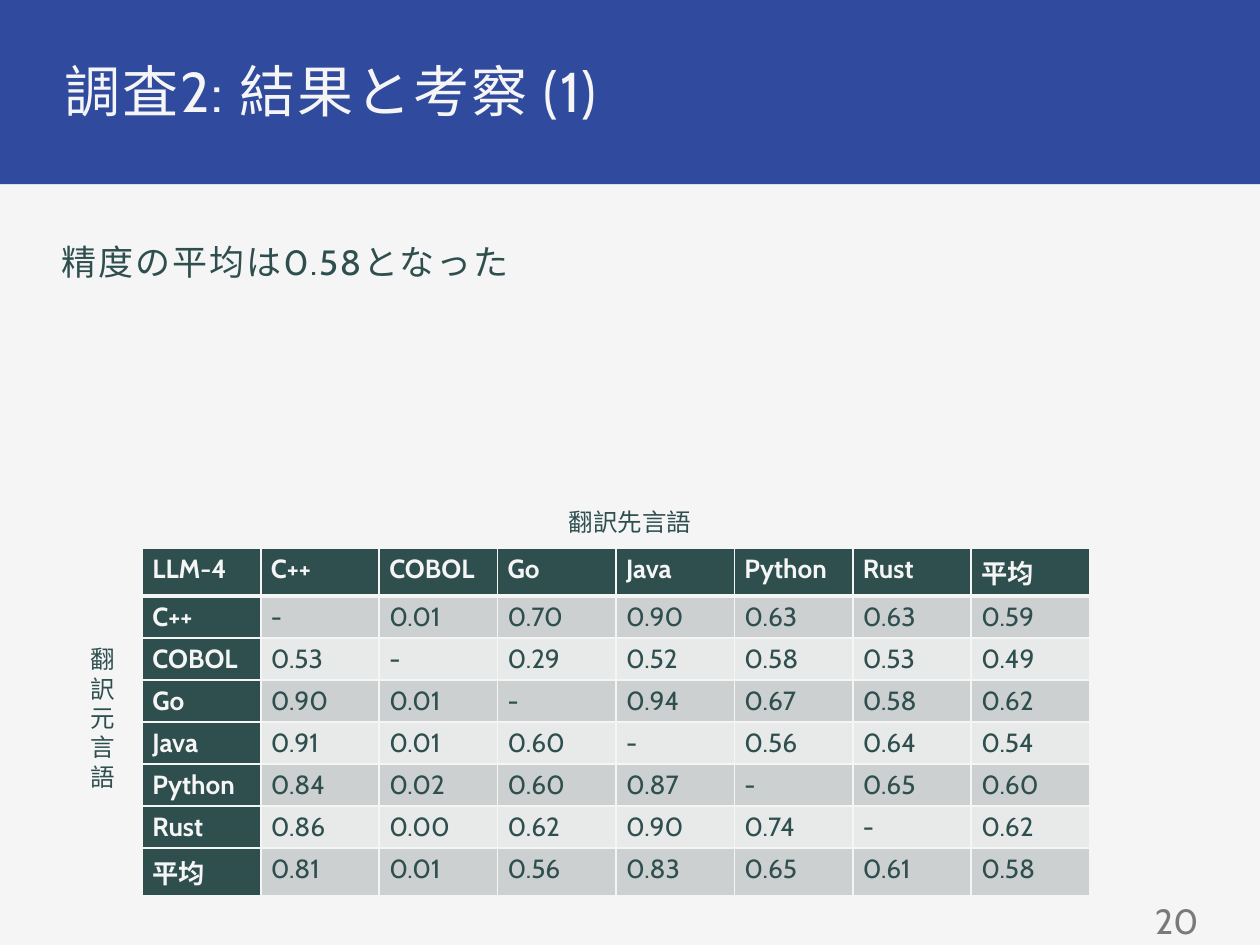
from dataclasses import dataclass

from lxml import etree
from pptx import Presentation
from pptx import util as u
from pptx.dml.color import RGBColor
from pptx.enum import shapes, text
from pptx.oxml.ns import qn

NAVY = RGBColor(0x30, 0x4A, 0x9E)
PAPER = RGBColor(0xF5, 0xF5, 0xF5)
SLATE = RGBColor(0x2F, 0x4F, 0x4F)
DARK = RGBColor(0xCD, 0xD0, 0xD0)
LIGHT = RGBColor(0xE8, 0xE9, 0xE9)
GRAY = RGBColor(0x7A, 0x7A, 0x7A)
FACE = "Cabin"
WIDE, HIGH = u.Inches(10), u.Inches(7.5)
LEFT, TOP, COL, ROW = 1.13, 4.35, 0.94, 0.31
LANGS = ["C++", "COBOL", "Go", "Java", "Python", "Rust", "平均"]
SCORES = """
- 0.01 0.70 0.90 0.63 0.63 0.59
0.53 - 0.29 0.52 0.58 0.53 0.49
0.90 0.01 - 0.94 0.67 0.58 0.62
0.91 0.01 0.60 - 0.56 0.64 0.54
0.84 0.02 0.60 0.87 - 0.65 0.60
0.86 0.00 0.62 0.90 0.74 - 0.62
0.81 0.01 0.56 0.83 0.65 0.61 0.58
"""


@dataclass
class Label:
    """A line of text with its box as shares of the slide."""

    words: str
    x: float
    y: float
    w: float
    h: float
    size: int
    color: RGBColor = SLATE
    align: text.PP_ALIGN = text.PP_ALIGN.LEFT
    anchor: text.MSO_ANCHOR = text.MSO_ANCHOR.TOP
    pad: tuple[float, float] = (0.06, 0.06)
    track: int = 0
    lead: float = 1.0


LABELS = [
    Label("調査2: 結果と考察 (1)", 0.043, 0.057, 0.913, 0.079, 32, PAPER,
          pad=(0.08, 0.08), track=110, lead=0.9),
    Label("精度の平均は0.58となった", 0.043, 0.252, 0.913, 0.69, 20,
          track=110, lead=0.9),
    Label("20", 0.732, 0.948, 0.225, 0.052, 20, GRAY,
          text.PP_ALIGN.RIGHT, text.MSO_ANCHOR.MIDDLE),
    Label("翻訳元言語", 0.062, 0.675, 0.033, 0.17, 14, pad=(0.1, 0.05)),
    Label("翻訳先言語", 0.408, 0.53, 0.184, 0.045, 14,
          align=text.PP_ALIGN.CENTER, pad=(0.1, 0.05)),
]


def style(font, size: int, color: RGBColor, bold: bool = False) -> None:
    """Give a font its face, size, colour and weight."""
    font.name, font.size, font.bold = FACE, u.Pt(size), bold
    font.color.rgb = color


def write(slide, item: Label) -> None:
    """Draw one label."""
    box = slide.shapes.add_textbox(
        int(item.x * WIDE), int(item.y * HIGH),
        int(item.w * WIDE), int(item.h * HIGH))
    frame = box.text_frame
    frame.word_wrap, frame.vertical_anchor = True, item.anchor
    frame.margin_left = frame.margin_right = u.Inches(item.pad[0])
    frame.margin_top = frame.margin_bottom = u.Inches(item.pad[1])
    para = frame.paragraphs[0]
    para.text, para.alignment = item.words, item.align
    para.line_spacing = item.lead
    style(para.font, item.size, item.color)
    if item.track:
        para.runs[0].font._element.set("spc", str(item.track))


def edge(cell, side: str, width: float) -> None:
    """Add one border line to a cell."""
    line = etree.Element(qn(f"a:ln{side}"), w=str(u.Pt(width)))
    fill = etree.SubElement(line, qn("a:solidFill"))
    etree.SubElement(fill, qn("a:srgbClr"), val=str(PAPER))
    cell._tc.get_or_add_tcPr().append(line)


def enter(cell, words: str, row: int, col: int) -> None:
    """Fill one table cell according to its row and column."""
    head = row == 0 or col == 0
    for side in "LRTB":
        thick = (row, side) in ((0, "B"), (1, "T"))
        edge(cell, side, 3 if thick else 1)
    cell.fill.solid()
    cell.fill.fore_color.rgb = SLATE if head else DARK if row % 2 else LIGHT
    cell.margin_left = cell.margin_right = u.Inches(0.08)
    cell.margin_top = cell.margin_bottom = u.Inches(0.04)
    para = cell.text_frame.paragraphs[0]
    para.text = words
    style(para.font, 15, PAPER if head else SLATE, head)


def tabulate(slide) -> None:
    """Draw the table of scores."""
    scores = [line.split() for line in SCORES.strip().splitlines()]
    grid = [["LLM-4", *LANGS]]
    grid += [[name, *vals] for name, vals in zip(LANGS, scores)]
    size = len(grid)
    table = slide.shapes.add_table(
        size, size, u.Inches(LEFT), u.Inches(TOP),
        u.Inches(COL * size), u.Inches(ROW * size)).table
    for row, line in enumerate(grid):
        for col, words in enumerate(line):
            enter(table.cell(row, col), words, row, col)


def main() -> None:
    """Build the slide and save it."""
    deck = Presentation()
    deck.slide_width, deck.slide_height = WIDE, HIGH
    slide = deck.slides.add_slide(deck.slide_layouts[6])
    slide.background.fill.solid()
    slide.background.fill.fore_color.rgb = PAPER
    band = slide.shapes.add_shape(
        shapes.MSO_SHAPE.RECTANGLE, 0, 0, WIDE, int(0.195 * HIGH))
    band.shadow.inherit = False
    band.fill.solid()
    band.fill.fore_color.rgb = NAVY
    band.line.fill.background()
    tabulate(slide)
    for item in LABELS:
        write(slide, item)
    deck.save("out.pptx")


if __name__ == "__main__":
    main()
